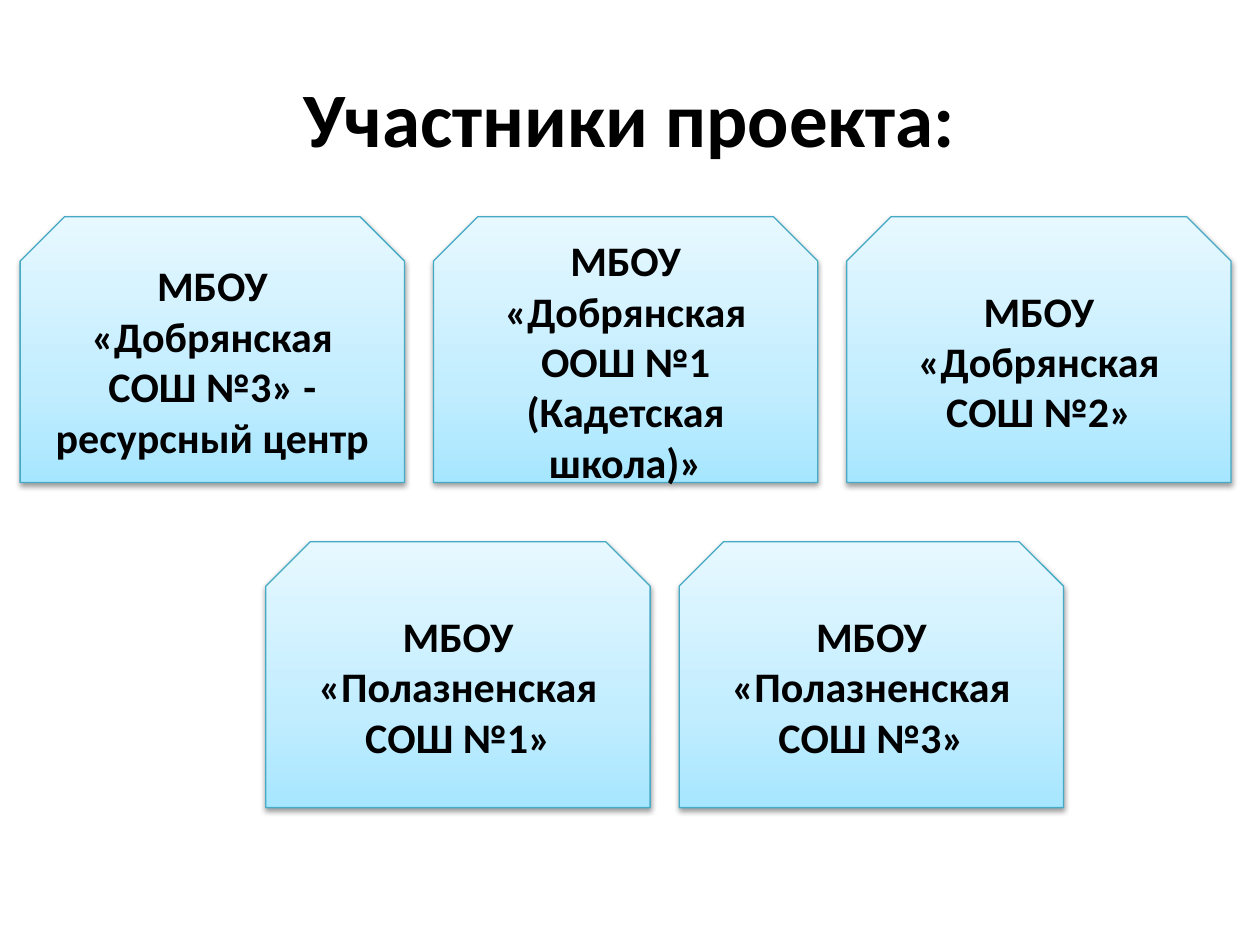
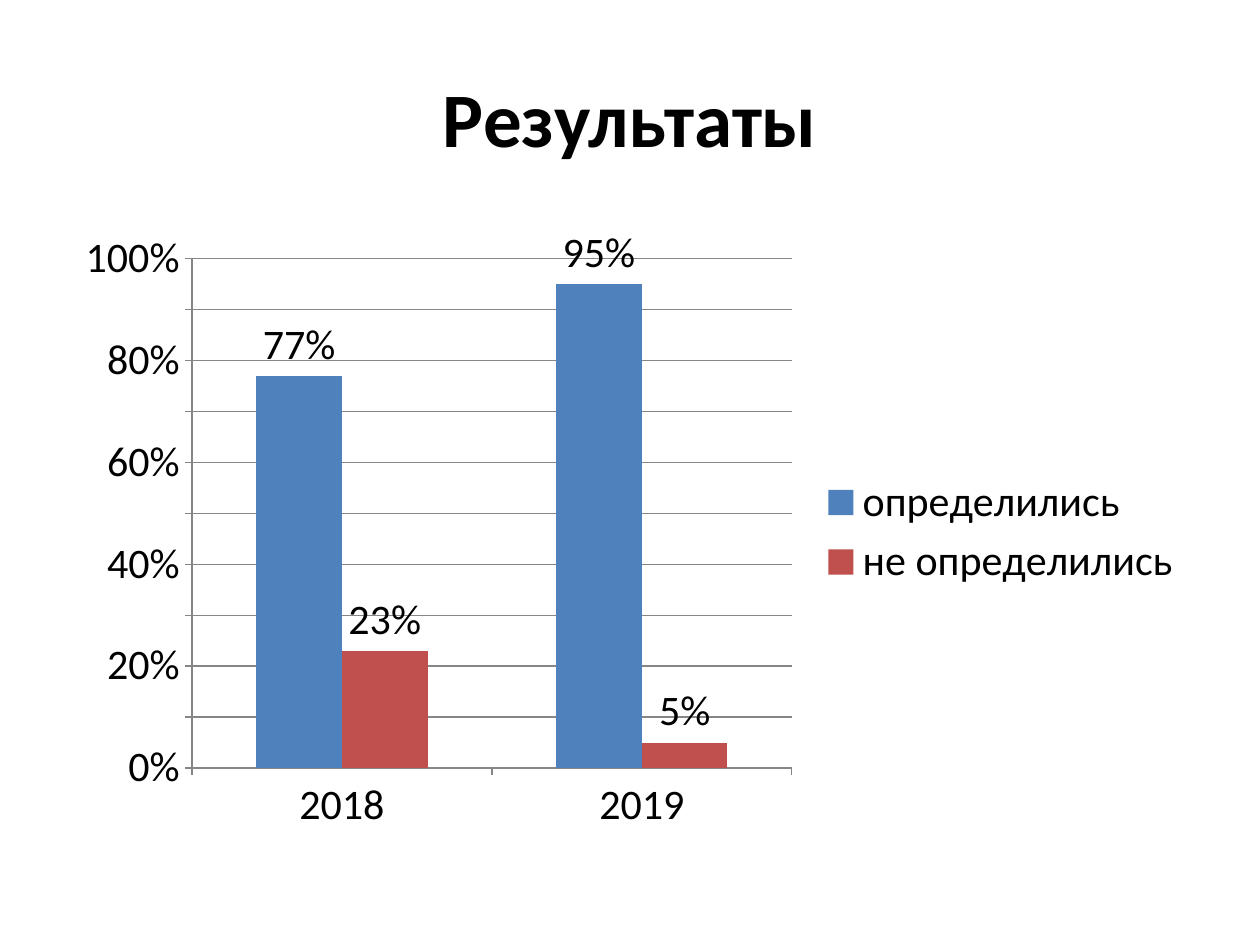
from copy import deepcopy

from lxml.etree import SubElement
from pptx import Presentation
from pptx.chart.data import CategoryChartData as Data
from pptx.dml.color import RGBColor as RGB
from pptx.enum.chart import XL_CHART_TYPE as Kind, XL_LABEL_POSITION as Spot
from pptx.enum.chart import XL_LEGEND_POSITION as Side, XL_TICK_MARK as Tick
from pptx.enum.shapes import MSO_SHAPE as Form
from pptx.enum.text import MSO_ANCHOR as Anchor, PP_ALIGN as Align
from pptx.oxml.ns import qn
from pptx.util import Inches, Pt

FONT = "Calibri"
HEX = {"text": "000000", "edge": "46AAC5", "axis": "868686",
       "low": "A7E6FF", "mid": "C1EDFF", "high": "E7F8FF",
       "yes": "4F81BD", "no": "C0504D"}
INK = {name: RGB.from_string(code) for name, code in HEX.items()}


def write(shape, text, size=24, bold=True, color="text", align=Align.CENTER):
    frame = shape.text_frame
    frame.word_wrap = True
    frame.vertical_anchor = Anchor.MIDDLE
    par = frame.paragraphs[0]
    par.alignment = align
    run = par.add_run()
    run.text = text
    font = run.font
    font.name, font.size, font.bold = FONT, Pt(size), bold
    font.color.rgb = INK[color]


def paint(card):
    """Give a card its three-stop gradient, thin edge and soft shadow."""
    fill = card.fill
    fill.gradient()
    fill.gradient_angle = 90
    for stop, name, place in zip(fill.gradient_stops, ("low", "high"), (0, 1)):
        stop.color.rgb = INK[name]
        stop.position = place
    props = card._element.spPr
    stops = props.find(".//" + qn("a:gsLst"))
    stops.insert(1, deepcopy(stops[0]))
    mid = fill.gradient_stops[1]
    mid.color.rgb = INK["mid"]
    mid.position = 0.35

    card.line.color.rgb = INK["edge"]
    card.line.width = Pt(0.75)

    card.shadow.inherit = False
    shade = SubElement(props.find(qn("a:effectLst")), qn("a:outerShdw"),
                       blurRad=str(Pt(3.1)), dist=str(Pt(1.6)),
                       dir="5400000", rotWithShape="0")
    tone = SubElement(shade, qn("a:srgbClr"), val=HEX["text"])
    SubElement(tone, qn("a:alpha"), val="38000")


deck = Presentation()
deck.slide_width, deck.slide_height = Inches(10), Inches(7.5)

# Both slides share one title style
slides = []
for head in ("Участники проекта:", "Результаты"):
    slide = deck.slides.add_slide(deck.slide_layouts[5])
    title = slide.shapes.title
    title.left, title.top = Inches(0.5), Inches(0.3)
    title.width, title.height = Inches(9), Inches(1.25)
    write(title, head, size=44)
    slides.append(slide)
people, results = slides

# Schools: two rows of cards, each with its own left edge
WIDE, HIGH = 3.05, 2.11
STEP, DROP, TOP = 3.28, 2.58, 1.72
rows = [
    (0.16, ["МБОУ «Добрянская СОШ №3» - ресурсный центр",
            "МБОУ «Добрянская ООШ №1 (Кадетская школа)»",
            "МБОУ «Добрянская СОШ №2»"]),
    (2.11, ["МБОУ «Полазненская СОШ №1»",
            "МБОУ «Полазненская СОШ №3»"]),
]
for row, (left, schools) in enumerate(rows):
    for col, school in enumerate(schools):
        card = people.shapes.add_shape(
            Form.SNIP_2_SAME_RECTANGLE,
            Inches(left + col * STEP), Inches(TOP + row * DROP),
            Inches(WIDE), Inches(HIGH))
        paint(card)
        write(card, school)

# Results chart
data = Data(number_format="0%")
data.categories = ["2018", "2019"]
data.add_series("определились", (0.77, 0.95))
data.add_series("не определились", (0.23, 0.05))
chart = results.shapes.add_chart(
    Kind.COLUMN_CLUSTERED, Inches(0.5), Inches(1.75),
    Inches(9), Inches(4.95), data).chart
chart.has_title = False
chart.font.name, chart.font.size = FONT, Pt(24)
chart.font.color.rgb = INK["text"]
chart.has_legend = True
chart.legend.position = Side.RIGHT
chart.legend.include_in_layout = False

scale = chart.value_axis
scale.minimum_scale, scale.maximum_scale, scale.major_unit = 0, 1, 0.1
scale.has_major_gridlines = True
scale.tick_labels.number_format = "0%"
scale.tick_labels.number_format_is_linked = False
for axis in (scale, chart.category_axis):
    axis.major_tick_mark = Tick.OUTSIDE
    axis.minor_tick_mark = Tick.NONE
for part in (scale, chart.category_axis, scale.major_gridlines):
    part.format.line.color.rgb = INK["axis"]
    part.format.line.width = Pt(0.75)

plot = chart.plots[0]
plot.gap_width, plot.overlap, plot.vary_by_categories = 150, 0, False
for bars, name in zip(plot.series, ("yes", "no")):
    bars.format.fill.solid()
    bars.format.fill.fore_color.rgb = INK[name]
    bars.invert_if_negative = False
    tags = bars.data_labels
    tags.show_value = True
    tags.number_format, tags.number_format_is_linked = "0%", False
    tags.position = Spot.OUTSIDE_END

deck.save("out.pptx")
